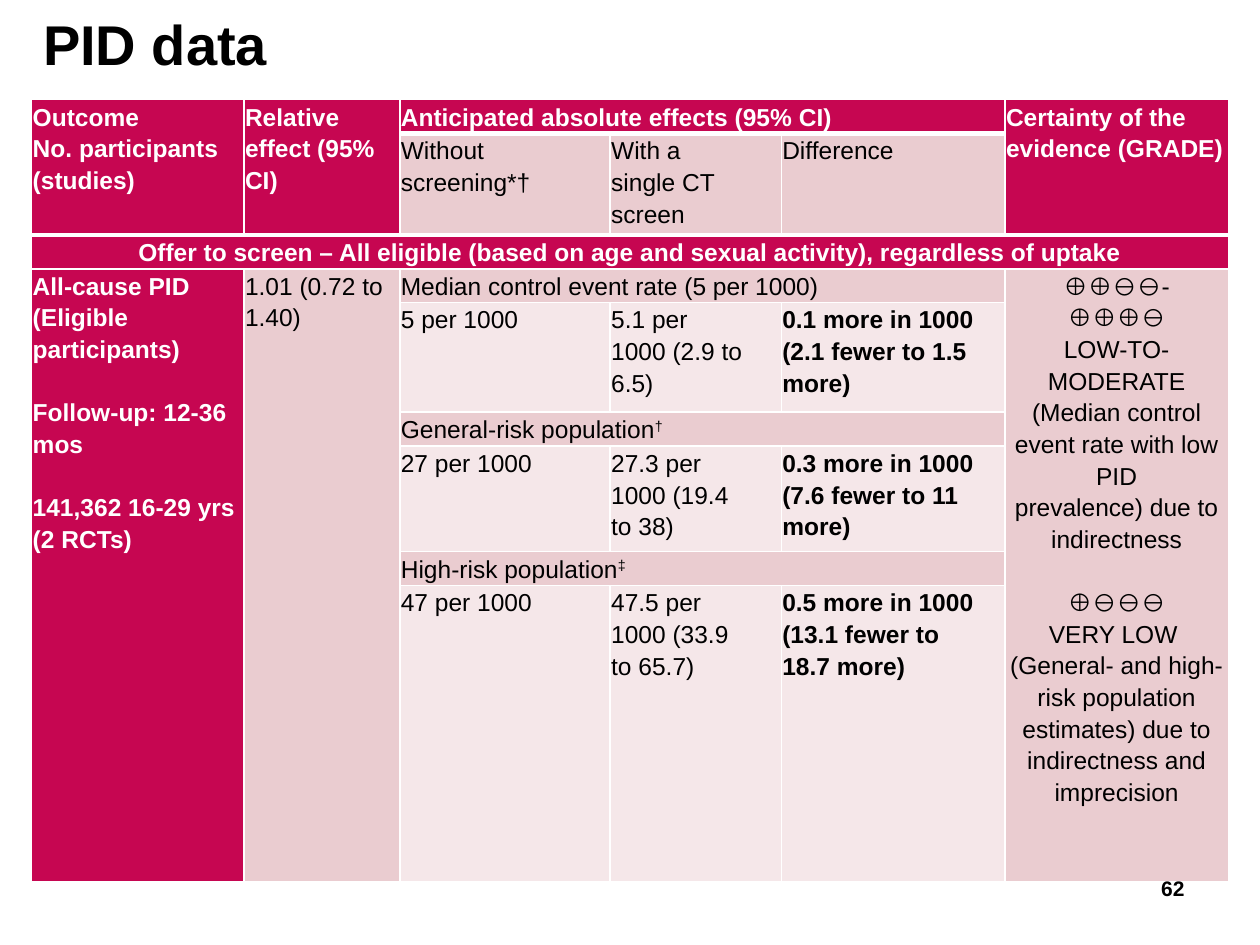
from lxml import etree
from pptx import Presentation
from pptx import util as u
from pptx.dml import color
from pptx.enum import text
from pptx.oxml import ns

RED, PINK, PALE = "C60651", "EACCD0", "F5E7E9"
WHITE, BLACK = "FFFFFF", "000000"
LEFT, MID, RIGHT = text.PP_ALIGN.LEFT, text.PP_ALIGN.CENTER, text.PP_ALIGN.RIGHT


def rgb(code):
    return color.RGBColor.from_string(code)


def put(frame, lines, size=14, bold=False, ink=BLACK, align=LEFT, lead=1.0, gaps=()):
    frame.word_wrap = True
    for i, line in enumerate(lines):
        para = frame.paragraphs[0] if i == 0 else frame.add_paragraph()
        para.alignment = align
        para.line_spacing = lead
        if i in gaps:
            para.space_before = u.Pt(18)
        for j, part in enumerate(line.split("^")):
            run = para.add_run()
            run.text = part
            run.font.name = "Arial"
            run.font.size = u.Pt(size)
            run.font.bold = bold
            run.font.color.rgb = rgb(ink)
            if j:
                run.font._element.set("baseline", "30000")


deck = Presentation()
deck.slide_width, deck.slide_height = u.Cm(25.4), u.Cm(19.05)
slide = deck.slides.add_slide(deck.slide_layouts[6])

banner = slide.shapes.add_textbox(u.Cm(0), u.Cm(-0.18), u.Cm(25.4), u.Cm(2.11))
banner.fill.solid()
banner.fill.fore_color.rgb = rgb(WHITE)
title = banner.text_frame
title.margin_left = u.Cm(0.87)
title.vertical_anchor = text.MSO_ANCHOR.MIDDLE
put(title, ["PID data"], size=32, bold=True)

widths = [4.28, 3.14, 4.24, 3.45, 4.51, 4.5]
heights = [0.43, 1.32, 0.48, 0.43, 2.21, 0.43, 2.13, 0.43, 5.97]
holder = slide.shapes.add_table(
    len(heights), len(widths), u.Cm(0.64), u.Cm(2.01), u.Cm(sum(widths)), u.Cm(sum(heights))
)
grid = holder.table
for col, width in zip(grid.columns, widths):
    col.width = u.Cm(width)
for row, height in zip(grid.rows, heights):
    row.height = u.Cm(height)
holder.height = u.Cm(15.39)

for r in range(len(heights)):
    for c in range(len(widths)):
        cell = grid.cell(r, c)
        cell.margin_left = cell.margin_right = u.Cm(0.02)
        cell.margin_top = cell.margin_bottom = 0
        props = cell._tc.get_or_add_tcPr()
        thick = {"lnT": r in (1, 2), "lnB": r in (0, 1)}
        for side in ("lnL", "lnR", "lnT", "lnB"):
            line = etree.SubElement(props, ns.qn("a:" + side))
            line.set("w", str(u.Pt(3 if thick.get(side) else 1)))
            fill = etree.SubElement(line, ns.qn("a:solidFill"))
            etree.SubElement(fill, ns.qn("a:srgbClr")).set("val", WHITE)
        cell.fill.solid()
        cell.fill.fore_color.rgb = rgb(PALE)

head = dict(bold=True, ink=WHITE)
cells = [
    (0, 0, 2, 1, RED, ["Outcome", "No. participants (studies)"], head),
    (0, 1, 2, 1, RED, ["Relative", "effect (95%", "CI)"], head),
    (0, 2, 1, 3, RED, ["Anticipated absolute effects (95% CI)"], head),
    (0, 5, 2, 1, RED, ["Certainty of the", "evidence (GRADE)"], head),
    (1, 2, 1, 1, PINK, ["Without", "screening*†"], {}),
    (1, 3, 1, 1, PINK, ["With a", "single CT", "screen"], {}),
    (1, 4, 1, 1, PINK, ["Difference"], {}),
    (2, 0, 1, 6, RED,
     ["Offer to screen – All eligible (based on age and sexual activity), regardless of uptake"],
     dict(head, align=MID)),
    (3, 0, 6, 1, RED,
     ["All-cause PID (Eligible", "participants)", "Follow-up: 12-36 mos",
      "141,362 16-29 yrs (2 RCTs)"], dict(head, gaps=(2, 3))),
    (3, 1, 6, 1, PINK, ["1.01 (0.72 to 1.40)"], {}),
    (3, 5, 6, 1, PINK,
     ["⊕⊕⊖⊖-", "⊕⊕⊕⊖", "LOW-TO-MODERATE", "(Median control event rate with low PID",
      "prevalence) due to indirectness", "⊕⊖⊖⊖", "VERY LOW ",
      "(General- and high-risk population estimates) due to indirectness and imprecision"],
     dict(align=MID, gaps=(5,))),
]
groups = [
    ("Median control event rate (5 per 1000)", "5 per 1000",
     ["5.1 per", "1000 (2.9 to", "6.5)"],
     ["0.1 more in 1000", "(2.1 fewer to 1.5", "more)"]),
    ("General-risk population^†", "27 per 1000",
     ["27.3 per", "1000 (19.4", "to 38)"],
     ["0.3 more in 1000", "(7.6 fewer to 11", "more)"]),
    ("High-risk population^‡", "47 per 1000",
     ["47.5 per", "1000 (33.9", "to 65.7)"],
     ["0.5 more in 1000", "(13.1 fewer to", "18.7 more)"]),
]
for i, (name, base, screen, change) in enumerate(groups):
    r = 3 + 2 * i
    cells += [
        (r, 2, 1, 3, PINK, [name], {}),
        (r + 1, 2, 1, 1, PALE, [base], {}),
        (r + 1, 3, 1, 1, PALE, screen, {}),
        (r + 1, 4, 1, 1, PALE, change, dict(bold=True)),
    ]

for r, c, down, across, shade, lines, style in cells:
    cell = grid.cell(r, c)
    if down * across > 1:
        cell.merge(grid.cell(r + down - 1, c + across - 1))
    cell.fill.fore_color.rgb = rgb(shade)
    put(cell.text_frame, lines, lead=1.15, **style)

page = slide.shapes.add_textbox(u.Cm(18.21), u.Cm(17.4), u.Cm(5.92), u.Cm(1.02)).text_frame
page.vertical_anchor = text.MSO_ANCHOR.MIDDLE
put(page, ["62"], size=12, bold=True, align=RIGHT)

deck.save("out.pptx")
